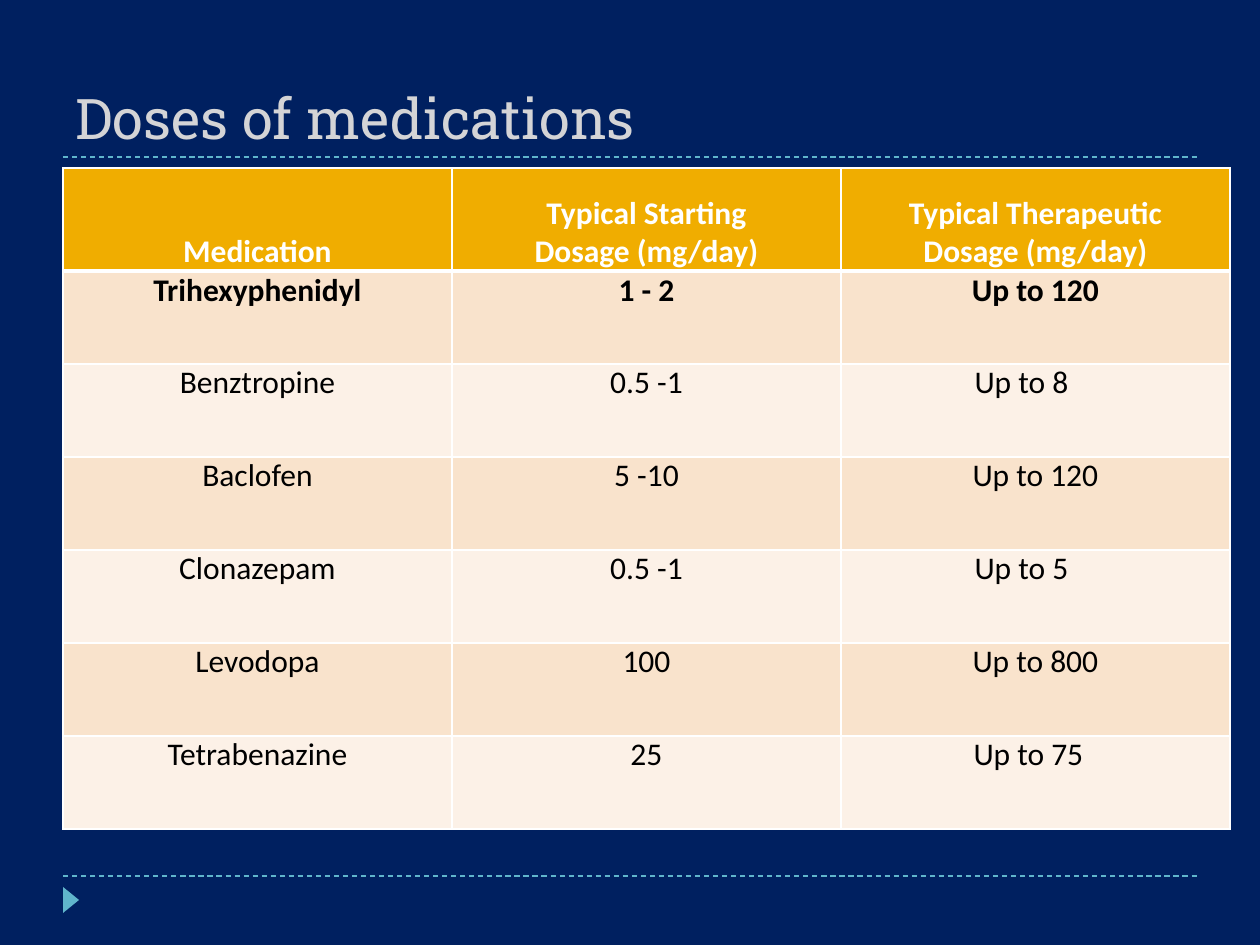
from dataclasses import dataclass

from lxml.etree import SubElement
from pptx import Presentation
from pptx.dml.color import RGBColor
from pptx.enum.dml import MSO_LINE
from pptx.enum.shapes import MSO_CONNECTOR, MSO_SHAPE
from pptx.enum.text import MSO_ANCHOR, PP_ALIGN
from pptx.oxml import parse_xml
from pptx.oxml.ns import nsdecls, qn
from pptx.util import Pt

EMU_PER_PX = 914400 / 126


@dataclass(frozen=True)
class Theme:
    background: str = "002060"
    accent: str = "60B5CC"
    title: str = "D4D4D6"
    header_fill: str = "F0AD00"
    header_text: str = "FFFFFF"
    body_text: str = "000000"
    bands: tuple = ("F9E3CC", "FCF1E7")
    border: str = "FFFFFF"
    title_font: str = "Roboto Slab"
    table_font: str = "Calibri"
    title_size: int = 32
    table_size: int = 18


THEME = Theme()

HEADER = ("Medication", "Typical Starting\nDosage (mg/day)",
          "Typical Therapeutic\nDosage (mg/day)")
DOSES = (
    ("Trihexyphenidyl", "1 - 2", "Up to 120"),
    ("Benztropine", "0.5 -1", "Up to 8"),
    ("Baclofen", "5 -10", "Up to 120"),
    ("Clonazepam", "0.5 -1", "Up to 5"),
    ("Levodopa", "100", "Up to 800"),
    ("Tetrabenazine", "25", "Up to 75"),
)
DIGIT_PAD = {1: 28, 2: 14, 3: 0}


def px(n):
    return round(n * EMU_PER_PX)


def rgb(value):
    return RGBColor.from_string(value)


def style_font(font, name, size, color, bold=False):
    font.name = name
    font.size = Pt(size)
    font.bold = bold
    font.color.rgb = rgb(color)


def add_rule(slide, x, y, w):
    line = slide.shapes.add_connector(
        MSO_CONNECTOR.STRAIGHT, px(x), px(y), px(x + w), px(y))
    line.line.color.rgb = rgb(THEME.accent)
    line.line.width = Pt(0.75)
    line.line.dash_style = MSO_LINE.DASH
    SubElement(line._element.spPr, qn("a:effectLst"))


def add_title(slide, x, y, w, h):
    title = slide.shapes.title
    title.left, title.top, title.width, title.height = map(px, (x, y, w, h))
    tf = title.text_frame
    tf.text = "Doses of medications"
    tf.vertical_anchor = MSO_ANCHOR.BOTTOM
    p = tf.paragraphs[0]
    p.alignment = PP_ALIGN.LEFT
    style_font(p.runs[0].font, THEME.title_font, THEME.title_size, THEME.title)
    add_rule(slide, x, y + h, w)


def add_footer(slide, x, y, w):
    add_rule(slide, x, y, w)
    marker_w, marker_h = 26, 16
    # The quarter turn swaps the marker's sides about its centre.
    shift = (marker_w - marker_h) // 2
    sp = slide.shapes.add_shape(
        MSO_SHAPE.ISOSCELES_TRIANGLE, px(x - shift), px(y + 11 + shift),
        px(marker_w), px(marker_h))
    sp.rotation = 90
    sp.shadow.inherit = False
    sp.fill.solid()
    sp.fill.fore_color.rgb = rgb(THEME.accent)
    sp.line.fill.background()


def set_borders(cell, top, bottom):
    """Border the cell, with top and bottom widths in points."""
    tc_pr = cell._tc.get_or_add_tcPr()
    widths = {"lnL": 1, "lnR": 1, "lnT": top, "lnB": bottom}
    for i, (tag, width) in enumerate(widths.items()):
        tc_pr.insert(i, parse_xml(
            f'<a:{tag} {nsdecls("a")} w="{Pt(width)}"><a:solidFill>'
            f'<a:srgbClr val="{THEME.border}"/></a:solidFill></a:{tag}>'))


def fill_cell(cell, text, fill, color, bold, anchor):
    cell.margin_left = cell.margin_right = 0
    cell.margin_top = cell.margin_bottom = 0
    cell.vertical_anchor = anchor
    cell.fill.solid()
    cell.fill.fore_color.rgb = rgb(fill)
    p = cell.text_frame.paragraphs[0]
    p.text = text
    p.alignment = PP_ALIGN.CENTER
    for r in p.runs:
        style_font(r.font, THEME.table_font, THEME.table_size, color, bold)


def add_dose_table(slide, x, y, col_w, header_h, row_h):
    n_rows, n_cols = len(DOSES) + 1, len(HEADER)
    height = header_h + row_h * len(DOSES)
    table = slide.shapes.add_table(
        n_rows, n_cols, px(x), px(y), px(col_w * n_cols), px(height)).table
    for col in table.columns:
        col.width = px(col_w)
    for i, row in enumerate(table.rows):
        row.height = px(row_h if i else header_h)

    for cell, text in zip(table.rows[0].cells, HEADER):
        fill_cell(cell, text, THEME.header_fill, THEME.header_text, True,
                  MSO_ANCHOR.BOTTOM)
        set_borders(cell, top=1, bottom=3)

    for i, values in enumerate(DOSES):
        cells = list(table.rows[i + 1].cells)
        for cell, text in zip(cells, values):
            fill_cell(cell, text, THEME.bands[i % 2], THEME.body_text, i == 0,
                      MSO_ANCHOR.TOP)
            set_borders(cell, top=1 if i else 3, bottom=1)
        digits = len(values[-1].split()[-1])
        cells[-1].margin_right = px(DIGIT_PAD[digits])


def main():
    prs = Presentation()
    prs.slide_width, prs.slide_height = px(1260), px(945)
    slide = prs.slides.add_slide(prs.slide_layouts[5])
    slide.background.fill.solid()
    slide.background.fill.fore_color.rgb = rgb(THEME.background)
    add_footer(slide, 63, 876, 1134)
    add_title(slide, 63, 21, 1134, 136)
    add_dose_table(slide, 63, 168, col_w=389, header_h=103, row_h=93)
    prs.save("out.pptx")


if __name__ == "__main__":
    main()
